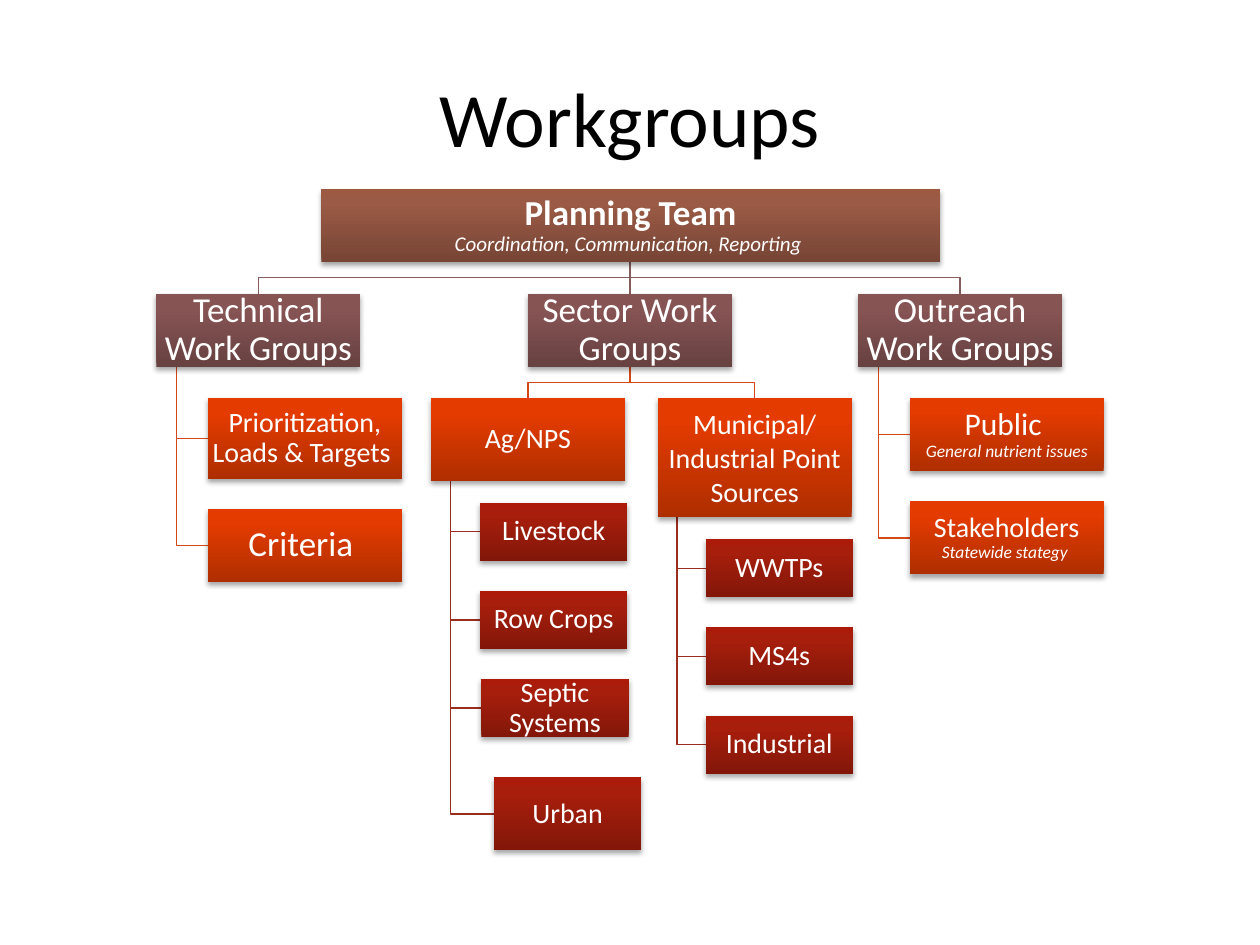
from copy import deepcopy

from lxml import etree
from pptx import Presentation
from pptx.dml.color import RGBColor
from pptx.enum.shapes import MSO_CONNECTOR, MSO_SHAPE
from pptx.enum.text import MSO_ANCHOR, PP_ALIGN
from pptx.oxml.ns import qn
from pptx.util import Inches, Pt

RECTANGLE = MSO_SHAPE.RECTANGLE
STRAIGHT = MSO_CONNECTOR.STRAIGHT
MIDDLE = MSO_ANCHOR.MIDDLE
CENTER = PP_ALIGN.CENTER

FONT = "Calibri"
COLORS = {
    "title": "000000", "text": "FFFFFF", "shadow": "000000",
    "group line": "855D5D", "sector line": "D34817", "topic line": "9B2D1F",
}
# Gradient stops at 0, 80 and 100 %, running from bottom to top
GRADIENTS = {
    "team": ("774535", "9A5A45", "9D5A43"),
    "group": ("684141", "875454", "885454"),
    "sector": ("AF2E00", "E33B00", "E43B00"),
    "topic": ("821709", "A81E0C", "AC1B09"),
}
STOP_POSITIONS = (0, 0.8, 1)

# Box widths by level
WIDTHS = {"team": 4.91, "group": 1.62, "sector": 1.54, "topic": 1.17}
GROUP_TOP, SECTOR_TOP, BOX_H, TOPIC_H, TOPIC_STEP = 2.33, 3.16, 0.58, 0.46, 0.7

# key: level, left, top, height, paragraphs of (text, size, style)
BOXES = {
    "team": ("team", 2.55, 1.5, BOX_H, [
        ("Planning Team", 20, "bold"),
        ("Coordination, Communication, Reporting ", 12, "italic")]),
    "technical": ("group", 1.24, GROUP_TOP, BOX_H, [("Technical Work Groups", 20, "")]),
    "priorities": ("sector", 1.65, SECTOR_TOP, 0.64,
                   [("Prioritization, Loads & Targets ", 16, "")]),
    "criteria": ("sector", 1.65, 4.04, BOX_H, [("Criteria ", 20, "")]),
    "sectors": ("group", 4.19, GROUP_TOP, BOX_H, [("Sector Work Groups", 20, "")]),
    "ag": ("sector", 3.42, SECTOR_TOP, 0.66, [("Ag/NPS", 16, "")]),
    "septic": ("topic", 3.82, 5.39, TOPIC_H, [("Septic Systems", 16, "")]),
    "urban": ("topic", 3.92, 6.17, BOX_H, [("Urban", 16, "")]),
    "municipal": ("sector", 5.22, SECTOR_TOP, 0.94,
                  [("Municipal/ Industrial Point Sources", 16, "")]),
    "outreach": ("group", 6.81, GROUP_TOP, BOX_H, [("Outreach Work Groups", 20, "")]),
    "public": ("sector", 7.22, SECTOR_TOP, BOX_H, [
        ("Public ", 18, ""), ("General nutrient issues", 10, "italic")]),
    "stakeholders": ("sector", 7.22, 3.98, BOX_H, [
        ("Stakeholders", 16, ""), ("Statewide stategy ", 10, "italic")]),
}
for left, first_top, topics in ((3.81, 3.99, ("Livestock", "Row Crops")),
                                (5.6, 4.28, ("WWTPs", "MS4s", "Industrial"))):
    for row, topic in enumerate(topics):
        BOXES[topic] = ("topic", left, first_top + row * TOPIC_STEP, TOPIC_H,
                        [(topic, 16, "")])

# Children branch out below the parent's centre, or hang from its left side
BRANCHES = {"team": ("technical", "sectors", "outreach"),
            "sectors": ("ag", "municipal")}
HANGERS = {"technical": ("priorities", "criteria"),
           "ag": ("Livestock", "Row Crops", "septic", "urban"),
           "municipal": ("WWTPs", "MS4s", "Industrial"),
           "outreach": ("public", "stakeholders")}

prs = Presentation()
prs.slide_width, prs.slide_height = Inches(10), Inches(7.5)
slide = prs.slides.add_slide(prs.slide_layouts[6])


def style_paragraph(paragraph, text, size, color):
    paragraph.text = text
    paragraph.alignment = CENTER
    paragraph.font.name = FONT
    paragraph.font.size = Pt(size)
    paragraph.font.color.rgb = RGBColor.from_string(COLORS[color])


def draw_link(points, color):
    points = [(Inches(x), Inches(y)) for x, y in points]
    if points[0][0] == points[-1][0]:
        link = slide.shapes.add_connector(STRAIGHT, *points[0], *points[-1])
        etree.SubElement(link._element.spPr, qn("a:effectLst"))
    else:
        outline = slide.shapes.build_freeform(*points[0])
        outline.add_line_segments(points[1:], close=False)
        link = outline.convert_to_shape()
        link.fill.background()
        link.shadow.inherit = False
    link.line.color.rgb = RGBColor.from_string(COLORS[color])
    link.line.width = Pt(0.75)


# Title
title = slide.shapes.add_textbox(Inches(0.5), Inches(0.3), Inches(9), Inches(1.25))
title.text_frame.word_wrap = True
title.text_frame.vertical_anchor = MIDDLE
style_paragraph(title.text_frame.paragraphs[0], "Workgroups", 44, "title")

# Links, coloured by the child's level
for parent, children in (BRANCHES | HANGERS).items():
    level, left, top, height, _ = BOXES[parent]
    width, bottom = WIDTHS[level], top + height
    for child in children:
        child_level, child_left, child_top, child_height, _ = BOXES[child]
        if parent in BRANCHES:
            start_x = round(left + width / 2, 2)
            end_x = round(child_left + WIDTHS[child_level] / 2, 2)
            bend_y = (bottom + child_top) / 2
            route = [(start_x, bottom), (start_x, bend_y), (end_x, bend_y),
                     (end_x, child_top)]
        else:
            trunk_x = left + width / 10
            end_y = child_top + child_height / 2
            route = [(trunk_x, bottom), (trunk_x, end_y), (child_left, end_y)]
        draw_link(route, child_level + " line")

# Boxes
for key, (level, left, top, height, lines) in BOXES.items():
    box = slide.shapes.add_shape(RECTANGLE, Inches(left), Inches(top),
                                 Inches(WIDTHS[level]), Inches(height))
    box.line.fill.background()

    # Three-stop gradient
    box.fill.gradient()
    box.fill.gradient_angle = 90
    stop_list = box._element.spPr.find(".//" + qn("a:gsLst"))
    stop_list.insert(1, deepcopy(stop_list[0]))
    for stop, position, color in zip(box.fill.gradient_stops, STOP_POSITIONS,
                                     GRADIENTS[level]):
        stop.position = position
        stop.color.rgb = RGBColor.from_string(color)

    # Soft shadow below
    box.shadow.inherit = False
    effects = box._element.spPr.find(qn("a:effectLst"))
    shadow = etree.SubElement(effects, qn("a:outerShdw"), blurRad=str(Pt(3.1)),
                              dist=str(Pt(1.8)), dir="5400000", rotWithShape="0")
    shadow_color = etree.SubElement(shadow, qn("a:srgbClr"), val=COLORS["shadow"])
    etree.SubElement(shadow_color, qn("a:alpha"), val="35000")

    # Label
    frame = box.text_frame
    frame.word_wrap = True
    frame.vertical_anchor = MIDDLE
    frame.margin_left = frame.margin_right = Inches(0.01)
    frame.margin_top = frame.margin_bottom = Inches(0.01)
    for index, (text, size, style) in enumerate(lines):
        paragraph = frame.add_paragraph() if index else frame.paragraphs[0]
        style_paragraph(paragraph, text, size, "text")
        paragraph.line_spacing = 1.0 if key == "municipal" else 0.9
        paragraph.font.bold = style == "bold"
        paragraph.font.italic = style == "italic"

prs.save("out.pptx")
